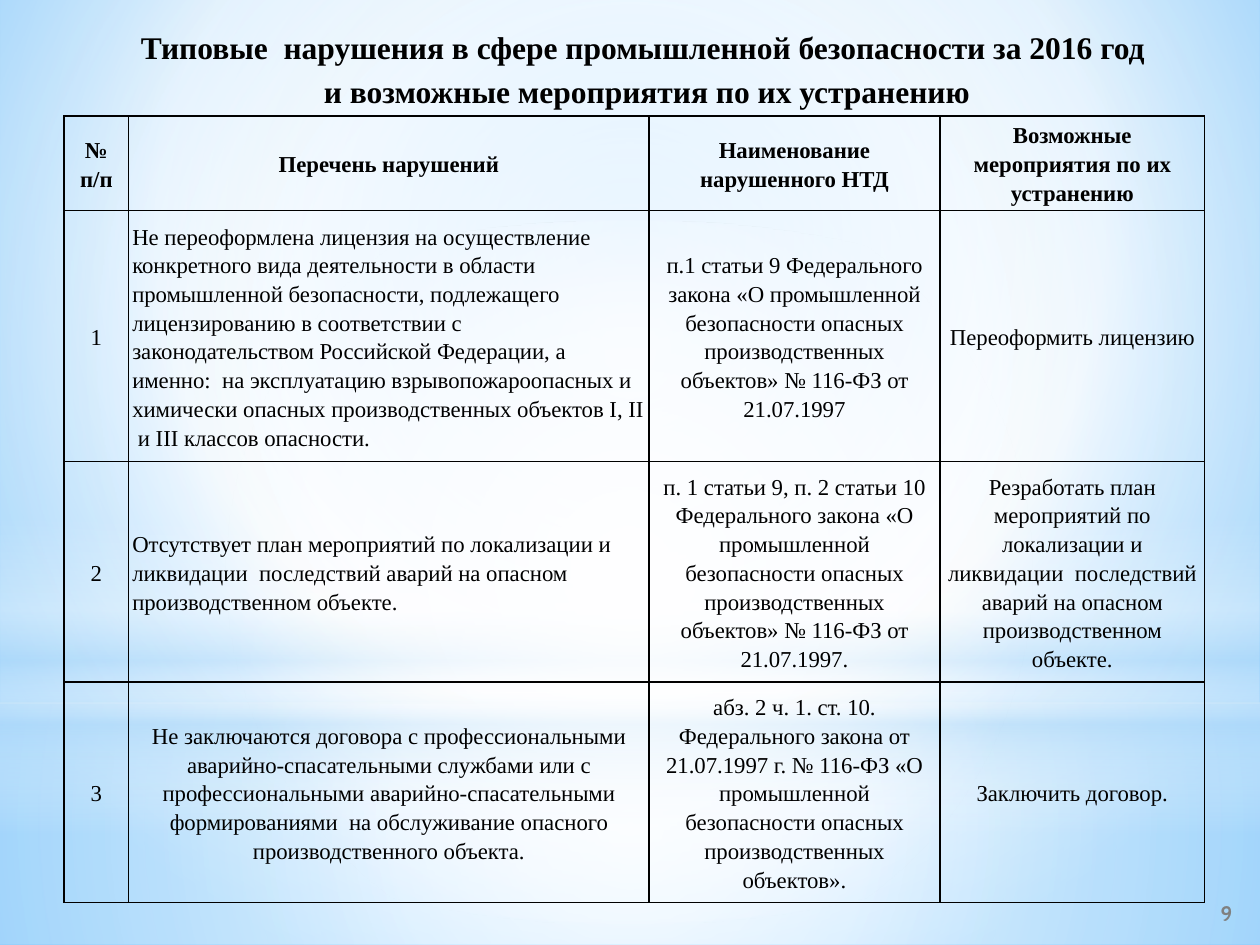
from lxml.etree import SubElement
from pptx import Presentation
from pptx.dml.color import RGBColor
from pptx.enum.shapes import MSO_SHAPE
from pptx.enum.text import MSO_ANCHOR, PP_ALIGN
from pptx.oxml.ns import qn
from pptx.util import Inches, Pt

BLACK = RGBColor(0x00, 0x00, 0x00)
GRAY = RGBColor(0x80, 0x80, 0x80)
WHITE = RGBColor(0xFF, 0xFF, 0xFF)
SKY = RGBColor(0x9E, 0xD5, 0xFF)
PALE_BLUE = RGBColor(0xB4, 0xDC, 0xFA)
BLUE = RGBColor(0x5B, 0xB9, 0xFF)

BODY_FONT = "Times New Roman"
NUMBER_FONT = "Cabin"
CENTER = (50, 50, 50, 50)

GLOWS = [
    (MSO_SHAPE.RECTANGLE, (0, 5.58, 10, 1.92),
     [(0, WHITE, 91), (37, WHITE, 76), (100, PALE_BLUE, 79)], CENTER),
    (MSO_SHAPE.RECTANGLE, (0, 0, 10, 5.58),
     [(0, WHITE, 89), (48, WHITE, 62), (100, PALE_BLUE, 79)], CENTER),
    (MSO_SHAPE.RECTANGLE, (0, 4.12, 10, 2.5),
     [(0, WHITE, 0), (29, WHITE, 30), (45, PALE_BLUE, 40),
      (55, WHITE, 26), (65, PALE_BLUE, 60), (100, WHITE, 0)], None),
    (MSO_SHAPE.OVAL, (0, 1.75, 10, 5.58),
     [(0, WHITE, 100), (56, WHITE, 0)], CENTER),
]

TITLE_LINES = [
    "Типовые  нарушения в сфере промышленной безопасности за 2016 год ",
    "и возможные мероприятия по их устранению",
]

COLUMN_WIDTHS = [0.51, 4.13, 2.31, 2.1]
ROW_HEIGHTS = [0.75, 1.99, 1.75, 1.75]
LEFT_ALIGNED = {(1, 1), (2, 1)}
VIOLATIONS = [
    ["№ п/п", "Перечень нарушений", "Наименование нарушенного НТД",
     "Возможные мероприятия по их устранению"],
    ["1",
     "Не переоформлена лицензия на осуществление конкретного вида деятельности "
     "в области промышленной безопасности, подлежащего лицензированию в "
     "соответствии с законодательством Российской Федерации, а именно:  на "
     "эксплуатацию взрывопожароопасных и химически опасных производственных "
     "объектов I, II  и III классов опасности.",
     "п.1 статьи 9 Федерального закона «О промышленной безопасности опасных "
     "производственных объектов» № 116-ФЗ от 21.07.1997",
     "Переоформить лицензию"],
    ["2",
     "Отсутствует план мероприятий по локализации и ликвидации  последствий "
     "аварий на опасном производственном объекте.",
     "п. 1 статьи 9, п. 2 статьи 10 Федерального закона «О промышленной "
     "безопасности опасных производственных объектов» № 116-ФЗ от 21.07.1997.",
     "Резработать план мероприятий по локализации и ликвидации  последствий "
     "аварий на опасном производственном объекте."],
    ["3",
     "Не заключаются договора с профессиональными аварийно-спасательными "
     "службами или с профессиональными аварийно-спасательными формированиями  "
     "на обслуживание опасного производственного объекта.",
     "абз. 2 ч. 1. ст. 10. Федерального закона от 21.07.1997 г. № 116-ФЗ "
     "«О промышленной безопасности опасных производственных объектов».",
     "Заключить договор."],
]


def set_gradient(fill, properties, stops, focus):
    fill.gradient()
    gradient = properties.find(qn("a:gradFill"))
    for child in list(gradient):
        gradient.remove(child)
    stop_list = SubElement(gradient, qn("a:gsLst"))
    for position, color, opacity in stops:
        stop = SubElement(stop_list, qn("a:gs"), pos=str(position * 1000))
        shade = SubElement(stop, qn("a:srgbClr"), val=str(color))
        if opacity < 100:
            SubElement(shade, qn("a:alpha"), val=str(opacity * 1000))
    if focus:
        circle = SubElement(gradient, qn("a:path"), {"path": "circle"})
        sides = {side: str(share * 1000) for side, share in zip("ltrb", focus)}
        SubElement(circle, qn("a:fillToRect"), sides)
    else:
        SubElement(gradient, qn("a:lin"), ang=str(90 * 60000), scaled="0")


def add_run(paragraph, text, font_name, size, color, bold):
    run = paragraph.add_run()
    run.text = text
    run.font.name = font_name
    run.font.size = Pt(size)
    run.font.color.rgb = color
    run.font.bold = bold


def draw_backdrop(slide):
    fill = slide.background.fill
    fill.solid()
    set_gradient(fill, next(slide.element.iter(qn("p:bgPr"))),
                 [(0, SKY, 100), (60, WHITE, 100), (100, BLUE, 100)],
                 (20, 10, 20, 60))
    for outline, box, stops, focus in GLOWS:
        glow = slide.shapes.add_shape(outline, *map(Inches, box))
        glow.shadow.inherit = False
        glow.line.fill.background()
        set_gradient(glow.fill, glow.element.spPr, stops, focus)


def draw_page_number(slide, left, top, width, height):
    number = slide.shapes.add_textbox(*map(Inches, (left, top, width, height)))
    frame = number.text_frame
    frame.word_wrap = True
    frame.vertical_anchor = MSO_ANCHOR.MIDDLE
    paragraph = frame.paragraphs[0]
    paragraph.alignment = PP_ALIGN.RIGHT
    add_run(paragraph, "9", NUMBER_FONT, 12, GRAY, True)


def draw_title(slide, left, top, width, height):
    title = slide.shapes.add_textbox(*map(Inches, (left, top, width, height)))
    frame = title.text_frame
    frame.word_wrap = True
    for index, line in enumerate(TITLE_LINES):
        paragraph = frame.add_paragraph() if index else frame.paragraphs[0]
        paragraph.alignment = PP_ALIGN.CENTER
        paragraph.line_spacing = 1.15
        paragraph._p.get_or_add_pPr().set("indent", str(Inches(0.5)))
        add_run(paragraph, line, BODY_FONT, 18, BLACK, True)


def add_borders(cell):
    properties = cell._tc.get_or_add_tcPr()
    for side in ("lnL", "lnR", "lnT", "lnB"):
        border = SubElement(properties, qn(f"a:{side}"), w=str(Pt(1)))
        paint = SubElement(border, qn("a:solidFill"))
        SubElement(paint, qn("a:srgbClr"), val=str(BLACK))


def draw_violations(slide, left, top):
    box = (left, top, sum(COLUMN_WIDTHS), sum(ROW_HEIGHTS))
    table = slide.shapes.add_table(
        len(ROW_HEIGHTS), len(COLUMN_WIDTHS), *map(Inches, box)).table
    table.first_row = False
    table.horz_banding = False
    for column, width in zip(table.columns, COLUMN_WIDTHS):
        column.width = Inches(width)
    for row, height in zip(table.rows, ROW_HEIGHTS):
        row.height = Inches(height)
    for row_index, texts in enumerate(VIOLATIONS):
        for column_index, text in enumerate(texts):
            cell = table.cell(row_index, column_index)
            add_borders(cell)
            cell.fill.background()
            cell.vertical_anchor = MSO_ANCHOR.MIDDLE
            cell.margin_left = cell.margin_right = Inches(0.03)
            cell.margin_top = cell.margin_bottom = 0
            paragraph = cell.text_frame.paragraphs[0]
            is_left = (row_index, column_index) in LEFT_ALIGNED
            paragraph.alignment = PP_ALIGN.LEFT if is_left else PP_ALIGN.CENTER
            paragraph.line_spacing = 1.15
            add_run(paragraph, text, BODY_FONT, 13, BLACK, row_index == 0)


def main():
    presentation = Presentation()
    presentation.slide_width = Inches(10)
    presentation.slide_height = Inches(7.5)
    slide = presentation.slides.add_slide(presentation.slide_layouts[6])
    draw_backdrop(slide)
    draw_page_number(slide, 7.88, 7.05, 2, 0.4)
    draw_title(slide, 0.28, 0.13, 9.21, 0.8)
    draw_violations(slide, 0.51, 0.92)
    presentation.save("out.pptx")


if __name__ == "__main__":
    main()
